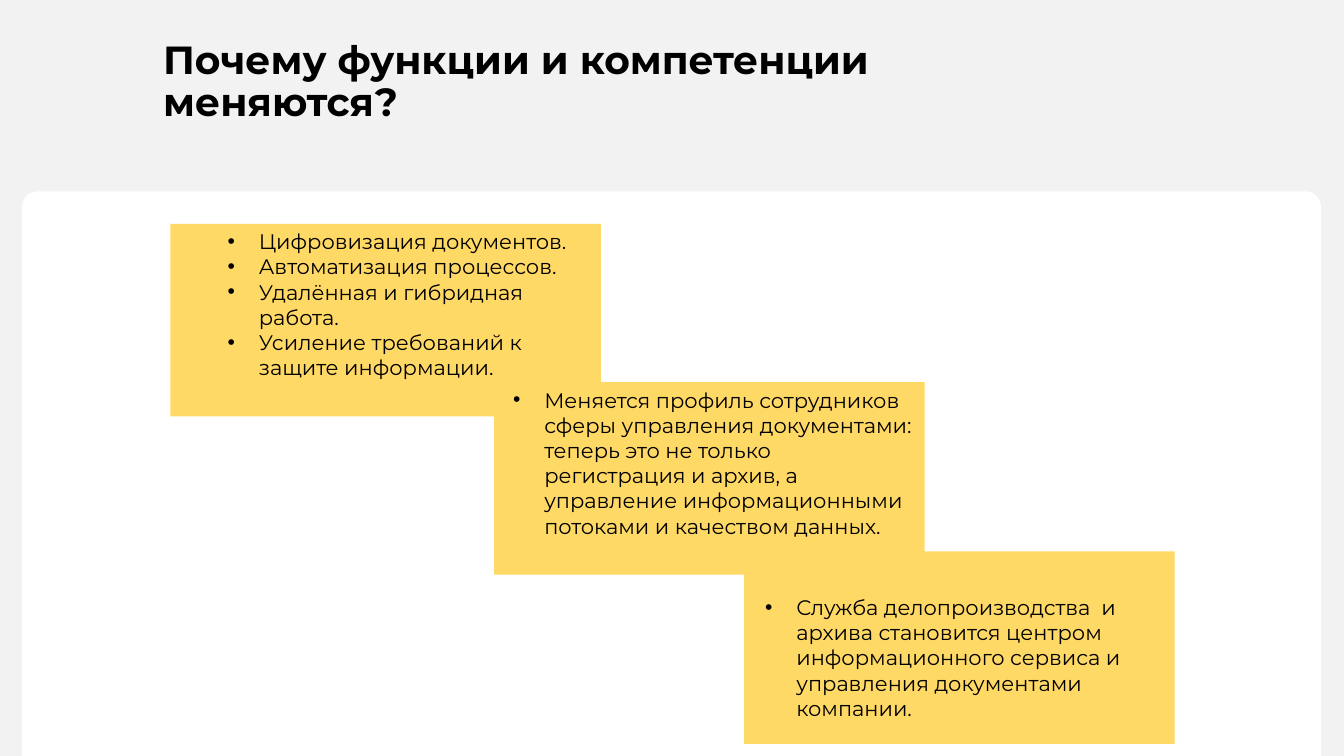
"""Build the slide on why document staff functions and competencies change."""
from lxml import etree
from pptx import Presentation
from pptx.dml.color import RGBColor
from pptx.enum import shapes, text
from pptx.oxml.ns import qn
from pptx.util import Inches, Pt

FONT = "Montserrat"
BLACK, WHITE, GREY, YELLOW = "000000", "FFFFFF", "F2F2F2", "FFD966"
TITLE = "Почему функции и компетенции меняются?"
CARD_SIZE = (4.27, 1.91)
CARDS = [
    ((1.69, 2.22), (2.16, 2.22, 3.67, 1.62), [
        "Цифровизация документов.",
        "Автоматизация процессов.",
        "Удалённая и гибридная работа.",
        "Усиление требований к защите информации.",
    ]),
    ((4.9, 3.79), (4.99, 3.79, 4.16, 1.62), [
        "Меняется профиль сотрудников сферы управления документами: "
        "теперь это не только регистрация и архив, а управление "
        "информационными потоками и качеством данных.",
    ]),
    ((7.38, 5.47), (7.49, 5.85, 4.16, 1.4), [
        "Служба делопроизводства  и архива становится центром "
        "информационного сервиса и управления документами компании.",
    ]),
]


def paint(fill, color):
    """Give a fill one solid colour."""
    fill.solid()
    fill.fore_color.rgb = RGBColor.from_string(color)


def add_block(page, kind, place, color):
    """Add a flat filled shape without outline."""
    block = page.shapes.add_shape(kind, *map(Inches, place))
    block.shadow.inherit = False
    block.line.fill.background()
    paint(block.fill, color)
    return block


def add_bullet(para):
    """Give a paragraph a round bullet with a hanging indent."""
    properties = para._p.get_or_add_pPr()
    properties.set("marL", str(Inches(0.31)))
    properties.set("indent", str(-Inches(0.31)))
    etree.SubElement(properties, qn("a:buFont"), typeface="Arial")
    etree.SubElement(properties, qn("a:buChar"), char="•")


def add_text(page, place, lines, size, bold=False, bullets=False,
             anchor=text.MSO_ANCHOR.TOP, spacing=1.0):
    """Add a wrapped text box with one paragraph per line."""
    box = page.shapes.add_textbox(*map(Inches, place))
    frame = box.text_frame
    frame.word_wrap = True
    frame.vertical_anchor = anchor
    style = {"name": FONT, "size": Pt(size), "bold": bold}
    for index, line in enumerate(lines):
        para = frame.add_paragraph() if index else frame.paragraphs[0]
        if bullets:
            add_bullet(para)
        para.line_spacing = spacing
        span = para.add_run()
        span.text = line
        for name, value in style.items():
            setattr(span.font, name, value)
        paint(span.font.fill, BLACK)


def main():
    """Compose the slide and save it."""
    deck = Presentation()
    deck.slide_width, deck.slide_height = Inches(13.33), Inches(7.5)
    page = deck.slides.add_slide(deck.slide_layouts[6])
    paint(page.background.fill, GREY)

    kinds = shapes.MSO_SHAPE
    panel = add_block(page, kinds.ROUND_2_SAME_RECTANGLE,
                      (0.22, 1.9, 12.88, 5.6), WHITE)
    panel.adjustments[0] = 0.026
    add_text(page, (1.52, 0.35, 9.02, 0.94), [TITLE], 28, bold=True,
             anchor=text.MSO_ANCHOR.MIDDLE, spacing=0.9)
    for corner, _, _ in CARDS:
        add_block(page, kinds.RECTANGLE, corner + CARD_SIZE, YELLOW)
    for _, place, lines in CARDS:
        add_text(page, place, lines, 15, bullets=True)
    deck.save("out.pptx")


if __name__ == "__main__":
    main()
